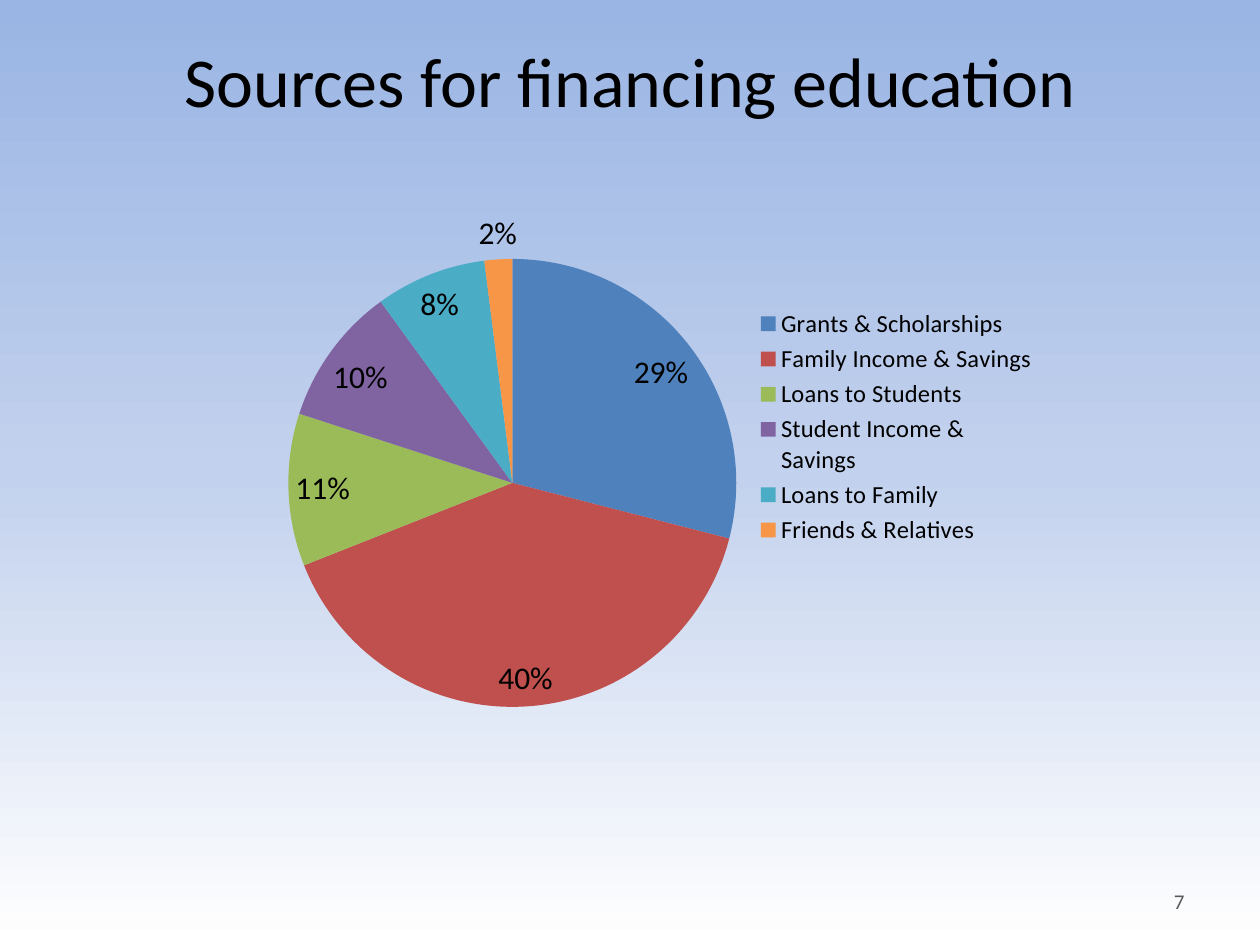
from copy import deepcopy

from lxml import etree
from pptx import Presentation
from pptx.chart.data import CategoryChartData
from pptx.dml.color import RGBColor
from pptx.enum.chart import XL_CHART_TYPE, XL_LABEL_POSITION, XL_LEGEND_POSITION
from pptx.enum.text import MSO_ANCHOR, PP_ALIGN
from pptx.oxml.ns import qn
from pptx.util import Emu, Pt

PIE = XL_CHART_TYPE.PIE
BEST_FIT = XL_LABEL_POSITION.BEST_FIT
RIGHT = XL_LEGEND_POSITION.RIGHT
MIDDLE = MSO_ANCHOR.MIDDLE
ALIGN_CENTER, ALIGN_RIGHT = PP_ALIGN.CENTER, PP_ALIGN.RIGHT

EMU_PER_PX = 914400 / 126
FONT = "Calibri"
COLORS = {
    "text": "000000", "number": "595959",
    "sky": "9AB5E4", "haze": "C2D1ED", "white": "FFFFFF",
    "blue": "4F81BD", "red": "C0504D", "green": "9BBB59",
    "purple": "8064A2", "teal": "4BACC6", "orange": "F79646",
}
BACKGROUND = [(0, "sky"), (0.5, "haze"), (1, "white")]
SOURCES = [
    ("Grants & Scholarships", 0.29, "blue"),
    ("Family Income & Savings", 0.4, "red"),
    ("Loans to Students", 0.11, "green"),
    ("Student Income & Savings", 0.1, "purple"),
    ("Loans to Family", 0.08, "teal"),
    ("Friends & Relatives", 0.02, "orange"),
]
PLOT = {"x": 0.09, "y": 0.2, "w": 0.54, "h": 0.8}


def px(n):
    """Convert pixels to EMU."""
    return Emu(round(n * EMU_PER_PX))


def rgb(name):
    """Look up a named colour."""
    return RGBColor.from_string(COLORS[name])


def set_attrs(obj, values):
    """Set every attribute in a dict of format values."""
    for key, value in values.items():
        setattr(obj, key, value)


def set_font(font, size, color="text"):
    """Give a font its face, size and colour."""
    set_attrs(font, {"name": FONT, "size": Pt(size), "bold": False})
    font.color.rgb = rgb(color)


def set_text(sp, box, text, size, align, color="text"):
    """Place a shape and fill it with one formatted paragraph."""
    set_attrs(sp, dict(zip(("left", "top", "width", "height"), map(px, box))))
    tf = sp.text_frame
    set_attrs(tf, {"word_wrap": True, "vertical_anchor": MIDDLE})
    p = tf.paragraphs[0]
    p.alignment = align
    r = p.add_run()
    r.text = text
    set_font(r.font, size, color)


def set_background(s):
    """Paint the vertical background gradient."""
    fill = s.background.fill
    fill.gradient()
    fill.gradient_angle = 270
    stops = s.element.find(".//" + qn("a:gsLst"))
    stops.append(deepcopy(stops[0]))
    for stop, (position, color) in zip(fill.gradient_stops, BACKGROUND):
        stop.position = position
        stop.color.rgb = rgb(color)


def set_plot_layout(chart):
    """Fix the inner plot area as fractions of the chart."""
    area = chart.element.find(".//" + qn("c:plotArea"))
    for old in area.findall(qn("c:layout")):
        area.remove(old)
    layout = etree.Element(qn("c:layout"))
    area.insert(0, layout)
    manual = etree.SubElement(layout, qn("c:manualLayout"))
    values = {"layoutTarget": "inner", "xMode": "edge", "yMode": "edge", **PLOT}
    for tag, value in values.items():
        etree.SubElement(manual, qn("c:" + tag)).set("val", str(value))


def add_pie(s, box):
    """Add the pie chart of financing sources."""
    names, shares, colors = zip(*SOURCES)
    data = CategoryChartData(number_format="0%")
    data.categories = names
    data.add_series("Series 1", shares)
    chart = s.shapes.add_chart(PIE, *map(px, box), data).chart
    set_attrs(chart, {"has_title": False, "has_legend": True})
    set_font(chart.font, 18)
    set_attrs(chart.legend, {"position": RIGHT, "include_in_layout": False})
    set_font(chart.legend.font, 14)
    plot = chart.plots[0]
    set_attrs(plot, {"vary_by_categories": True, "has_data_labels": True})
    set_attrs(plot.data_labels, {
        "show_value": True, "show_percentage": False, "number_format": "0%",
        "number_format_is_linked": False, "position": BEST_FIT,
    })
    set_font(plot.data_labels.font, 18)
    for i, color in enumerate(colors):
        fill = plot.series[0].points[i].format.fill
        fill.solid()
        fill.fore_color.rgb = rgb(color)
    set_plot_layout(chart)


def main():
    """Build and save the slide."""
    prs = Presentation()
    set_attrs(prs, {"slide_width": px(1260), "slide_height": px(945)})
    s = prs.slides.add_slide(prs.slide_layouts[5])
    set_background(s)
    set_text(s.shapes.title, (63, 0, 1134, 158),
             "Sources for financing education", 40, ALIGN_CENTER)
    number_box = (903, 876, 294, 50)
    number = s.shapes.add_textbox(*map(px, number_box))
    set_text(number, number_box, "7", 12, ALIGN_RIGHT, "number")
    add_pie(s, (210, 147, 840, 560))
    prs.save("out.pptx")


if __name__ == "__main__":
    main()
